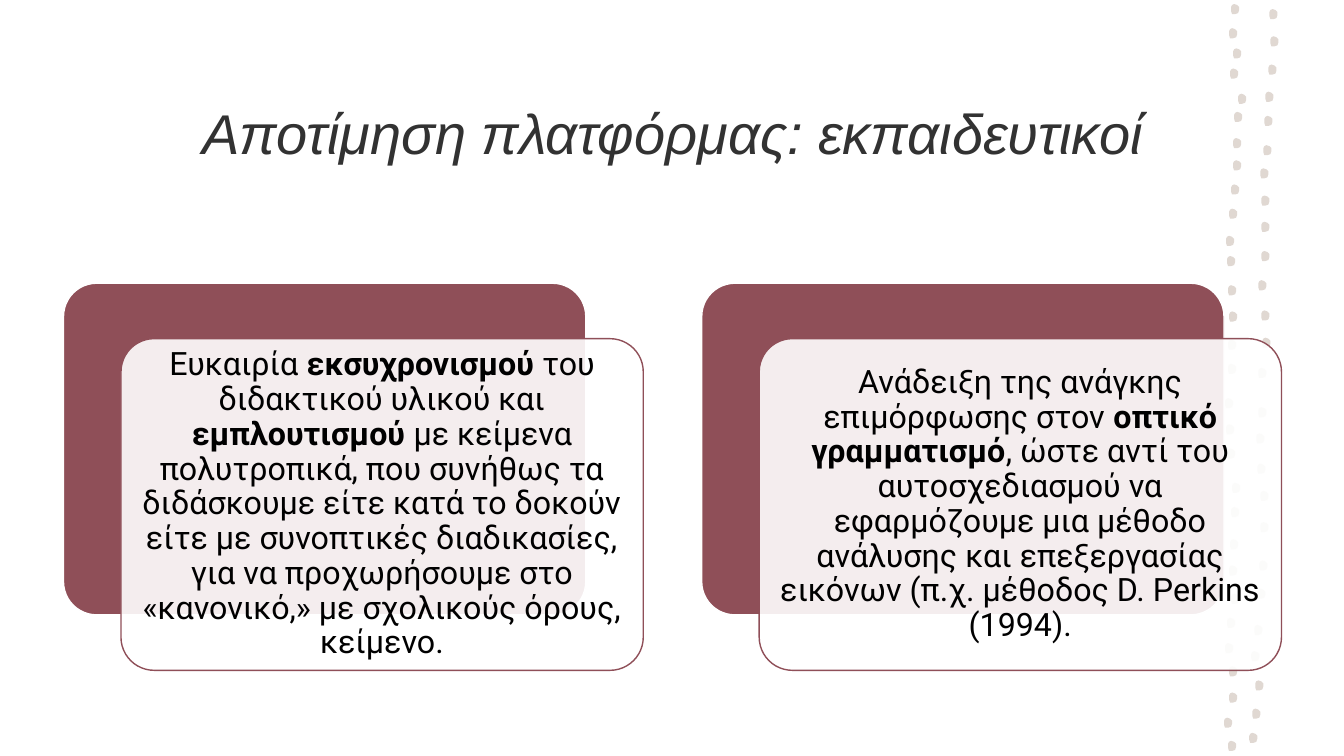
from lxml import etree
from pptx import Presentation
from pptx.dml.color import RGBColor
from pptx.enum.shapes import MSO_SHAPE
from pptx.enum.text import MSO_ANCHOR, PP_ALIGN
from pptx.oxml.ns import qn
from pptx.util import Inches, Pt

ROUNDED = MSO_SHAPE.ROUNDED_RECTANGLE
MIDDLE = MSO_ANCHOR.MIDDLE
CENTER = PP_ALIGN.CENTER

WINE = RGBColor(0x8F, 0x4F, 0x58)
SAND = RGBColor(0xE0, 0xD8, 0xD2)
CHARCOAL = RGBColor(0x32, 0x32, 0x32)
WHITE = RGBColor(0xFF, 0xFF, 0xFF)
BLACK = RGBColor(0, 0, 0)

TITLE = "Αποτίμηση πλατφόρμας: εκπαιδευτικοί"

# Each finding is a list of (text, bold) runs
FINDINGS = [
    [("Ευκαιρία ", False), ("εκσυχρονισμού", True),
     (" του διδακτικού υλικού και ", False), ("εμπλουτισμού", True),
     (" με κείμενα πολυτροπικά, που συνήθως τα διδάσκουμε είτε κατά το δοκούν "
      "είτε με συνοπτικές διαδικασίες, για να προχωρήσουμε στο «κανονικό,» "
      "με σχολικούς όρους, κείμενο.", False)],
    [("Ανάδειξη της ανάγκης επιμόρφωσης στον ", False),
     ("οπτικό γραμματισμό", True),
     (", ώστε αντί του αυτοσχεδιασμού να εφαρμόζουμε μια μέθοδο ανάλυσης και "
      "επεξεργασίας εικόνων (π.χ. μέθοδος D. Perkins (1994).", False)],
]

# Centres of the hand-drawn dots, relative to the left edge of their strip
INNER_DOTS = [
    (0.15, 0.09), (0.13, 0.33), (0.17, 0.53), (0.14, 0.73), (0.22, 0.98),
    (0.18, 1.16), (0.17, 1.42), (0.17, 1.64), (0.15, 1.88), (0.13, 2.12),
    (0.1, 2.39), (0.11, 2.59), (0.12, 2.88), (0.13, 3.14), (0.12, 3.42),
    (0.12, 3.66), (0.09, 4.0), (0.1, 4.26), (0.11, 4.5), (0.16, 4.84),
    (0.15, 5.08), (0.14, 5.4), (0.13, 5.66), (0.15, 5.94), (0.11, 6.18),
    (0.09, 6.43), (0.13, 6.66), (0.13, 6.92), (0.08, 7.17), (0.12, 7.4),
]
OUTER_DOTS = [
    (0.53, 0.14), (0.54, 0.41), (0.52, 0.69), (0.49, 0.96), (0.48, 1.2),
    (0.47, 1.49), (0.44, 1.72), (0.45, 1.99), (0.45, 2.25), (0.45, 2.54),
    (0.42, 2.83), (0.45, 3.13), (0.46, 3.4), (0.42, 3.7), (0.42, 4.09),
    (0.4, 4.35), (0.41, 4.65), (0.44, 4.92), (0.44, 5.23), (0.43, 5.61),
    (0.41, 5.89), (0.38, 6.25), (0.35, 6.51), (0.39, 6.8), (0.36, 7.08),
    (0.33, 7.32),
]
# Outline of one dot around its centre, in hundredths of an inch
DOT_OUTLINE = [(4, 1), (3, 4), (0, 5), (-3, 5), (-4, 2), (-4, -2),
               (-3, -4), (-1, -5), (2, -4), (4, -2)]


def add_dot_strip(slide, left, top):
    """Two wavering columns of small blobs."""
    for x, y in INNER_DOTS + OUTER_DOTS:
        outline = [(Inches(left + x + dx / 100), Inches(top + y + dy / 100))
                   for dx, dy in DOT_OUTLINE]
        builder = slide.shapes.build_freeform(*outline[0])
        builder.add_line_segments(outline[1:], close=True)
        dot = builder.convert_to_shape()
        dot.shadow.inherit = False
        dot.fill.solid()
        dot.fill.fore_color.rgb = SAND
        dot.line.fill.background()


def add_runs(paragraph, runs, font_name, size, color, italic=False):
    for text, bold in runs:
        run = paragraph.add_run()
        run.text = text
        font = run.font
        font.name, font.size, font.color.rgb = font_name, Pt(size), color
        font.bold, font.italic = bold, italic


def add_title(slide, left, top, width, height):
    title = slide.shapes.title
    title.left, title.top = Inches(left), Inches(top)
    title.width, title.height = Inches(width), Inches(height)
    title.text_frame.vertical_anchor = MIDDLE
    paragraph = title.text_frame.paragraphs[0]
    paragraph.alignment = CENTER
    add_runs(paragraph, [(TITLE, False)], "Arial", 40, CHARCOAL, italic=True)


def add_panel(slide, left, top, width, height, fill, line):
    panel = slide.shapes.add_shape(ROUNDED, Inches(left), Inches(top),
                                   Inches(width), Inches(height))
    panel.adjustments[0] = 0.1
    panel.shadow.inherit = False
    panel.fill.solid()
    panel.fill.fore_color.rgb = fill
    panel.line.color.rgb = line
    panel.line.width = Pt(1)
    return panel


def add_finding(slide, left, top, width, height, runs):
    """A wine backing panel with a translucent text card set over it."""
    shift_x, shift_y = 0.57, 0.55
    size = (width - shift_x, height - shift_y)
    add_panel(slide, left, top, *size, WINE, WHITE)
    card = add_panel(slide, left + shift_x, top + shift_y, *size, WHITE, WINE)

    # 90 % opacity lets the backing show through
    color = card.element.spPr.find(qn("a:solidFill")).find(qn("a:srgbClr"))
    etree.SubElement(color, qn("a:alpha")).set("val", "90000")

    frame = card.text_frame
    frame.word_wrap = True
    frame.vertical_anchor = MIDDLE
    frame.margin_left = frame.margin_right = Inches(0.1)
    frame.margin_top = frame.margin_bottom = Inches(0.1)
    paragraph = frame.paragraphs[0]
    paragraph.alignment = CENTER
    paragraph.line_spacing = 0.9
    add_runs(paragraph, runs, "Roboto", 23, BLACK)


def main():
    deck = Presentation()
    deck.slide_width, deck.slide_height = Inches(13.33), Inches(7.5)
    slide = deck.slides.add_slide(deck.slide_layouts[5])

    add_dot_strip(slide, 12.1, 0)
    add_title(slide, 1.56, 0.77, 10.22, 1.09)
    for column, runs in enumerate(FINDINGS):
        add_finding(slide, 0.63 + column * 6.33, 2.81, 5.75, 3.84, runs)

    deck.save("out.pptx")


if __name__ == "__main__":
    main()
